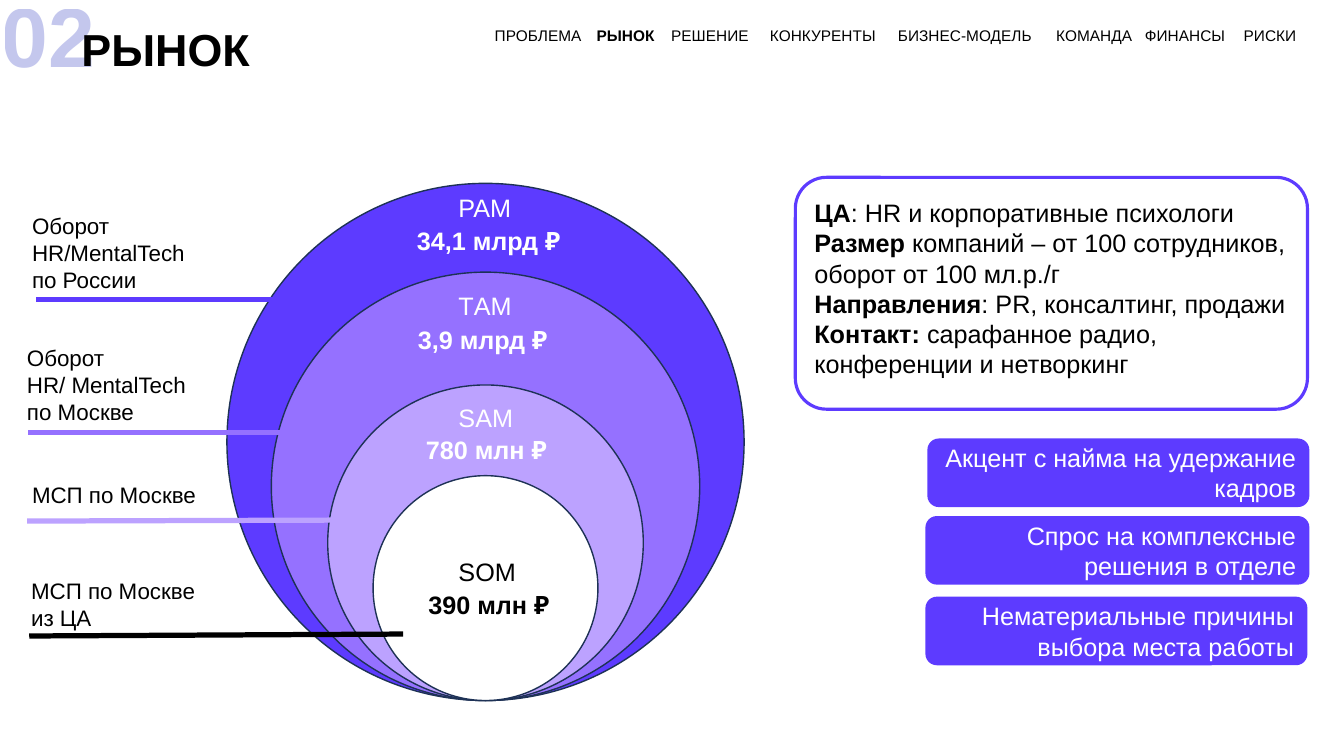
from lxml.etree import SubElement
from pptx import Presentation
from pptx.dml.color import RGBColor
from pptx.enum.shapes import MSO_CONNECTOR, MSO_SHAPE
from pptx.enum.text import MSO_ANCHOR, PP_ALIGN
from pptx.oxml.ns import qn
from pptx.util import Pt

FONT = "Arial"
COLORS = {
    "black": "000000",
    "white": "FFFFFF",
    "violet": "5D3BFF",
    "lilac": "9571FF",
    "lavender": "BCA2FF",
    "outline": "1E3256",
    "number": "565FCE",
}

SECTIONS = [
    ("ПРОБЛЕМА", 346.3, 77),
    ("РЫНОК", 419, 56.2),
    ("РЕШЕНИЕ", 472.3, 70.6),
    ("КОНКУРЕНТЫ", 542.9, 92.2),
    ("БИЗНЕС-МОДЕЛЬ", 634.3, 110.9),
    ("КОМАНДА", 747.4, 69.1),
    ("ФИНАНСЫ", 810.7, 72.7),
    ("РИСКИ", 881.3, 52.6),
]
CURRENT_SECTION = "РЫНОК"

CIRCLE_CENTER, CIRCLE_BOTTOM = 346.8, 500.4
MARKETS = [
    ("PAM", 133.9, "34,1 млрд ₽", 285.3, 157.7, 369.4, "violet", "white"),
    ("ТAM", 203.8, "3,9 млрд ₽", 281, 228.2, 306, "lilac", "white"),
    ("SAM", 283.7, "780 млн ₽", 283.7, 306.7, 225.4, "lavender", "white"),
    ("SOM", 393.8, "390 млн ₽", 285.5, 417.6, 160.6, "white", "black"),
]

CALLOUTS = [
    (["Оборот HR/MentalTech", "по России"], (15.8, 148.3, 176.4, 65.5), True),
    (["Оборот", "HR/ MentalTech", "по Москве"], (12.2, 242.6, 156.2, 65.5), True),
    (["МСП по Москве"], (15.8, 339.8, 133.2, 26.6), False),
    (["МСП по Москве", "из ЦА"], (15.1, 409, 137.5, 46.1), False),
]
POINTERS = [
    ((229.7, 213.8), (25.9, 213.8), "violet"),
    ((223.9, 308.9), (20.2, 308.9), "lilac"),
    ((244.8, 371.5), (19.4, 372.2), "lavender"),
    ((288, 452.9), (20.9, 454.3), "black"),
]

AUDIENCE = [
    ("ЦА", ": HR и корпоративные психологи"),
    ("Размер", " компаний – от 100 сотрудников, оборот от 100 мл.р./г"),
    ("Направления", ": PR, консалтинг, продажи"),
    ("Контакт: ", "сарафанное радио, конференции и нетворкинг"),
]
TRENDS = [
    ("Акцент с найма на удержание кадров", 662.4, 313.2, 272.9),
    ("Спрос на комплексные решения в отделе", 661, 368.6, 274.3),
    ("Нематериальные причины выбора места работы", 661, 426.2, 272.9),
]


def rgb(name):
    return RGBColor.from_string(COLORS[name])


def format_span(span, size, color, bold=False):
    span.font.name = FONT
    span.font.size = Pt(size)
    span.font.bold = bold
    span.font.color.rgb = rgb(color)


def add_text(page, lines, bounds, size, color="black", bold=False, wrap=False,
             align=PP_ALIGN.LEFT):
    box = page.shapes.add_textbox(*map(Pt, bounds))
    box.text_frame.word_wrap = wrap
    box.text_frame.text = "\n".join(lines)
    for para in box.text_frame.paragraphs:
        para.alignment = align
        format_span(para.runs[0], size, color, bold)
    return box


def add_filled_shape(page, kind, bounds, fill, line=None, line_width=1):
    shape = page.shapes.add_shape(kind, *map(Pt, bounds))
    shape.shadow.inherit = False
    shape.fill.solid()
    shape.fill.fore_color.rgb = rgb(fill)
    if line:
        shape.line.color.rgb = rgb(line)
        shape.line.width = Pt(line_width)
    else:
        shape.line.fill.background()
    return shape


def add_pointer(page, start, end, color):
    pointer = page.shapes.add_connector(MSO_CONNECTOR.STRAIGHT, *map(Pt, start + end))
    pointer.line.color.rgb = rgb(color)
    pointer.line.width = Pt(3.75)
    SubElement(pointer._element.spPr, qn("a:effectLst"))


def add_header(page):
    for name, left, width in SECTIONS:
        add_text(page, [name], (left, 15.1, width, 20.9), 11,
                 bold=name == CURRENT_SECTION)
    number = add_text(page, ["02"], (-5.8, -15.1, 82.1, 79.9), 60, "number", True)
    span = number.text_frame.paragraphs[0].runs[0]
    tint = span.font._element.find(qn("a:solidFill"))[0]
    SubElement(tint, qn("a:alpha"), val="35000")
    add_text(page, ["РЫНОК"], (51.1, 12.2, 136.1, 46.1), 32, bold=True)


def add_markets(page):
    for *labels, diameter, fill, color in MARKETS:
        bounds = (CIRCLE_CENTER - diameter / 2, CIRCLE_BOTTOM - diameter,
                  diameter, diameter)
        add_filled_shape(page, MSO_SHAPE.OVAL, bounds, fill, "outline")
    for name, name_top, value, left, top, diameter, fill, color in MARKETS:
        add_text(page, [name], (320.4, name_top, 74, 28.8), 18, color, wrap=True)
        add_text(page, [value], (left, top, 127.4, 28.8), 18, color, True, True,
                 PP_ALIGN.CENTER)


def add_audience(page):
    frame = add_filled_shape(page, MSO_SHAPE.ROUNDED_RECTANGLE,
                             (568.1, 126.7, 365.8, 165.6), "white", "violet", 2.25)
    frame.adjustments[0] = 0.134
    lines = [term + detail for term, detail in AUDIENCE]
    box = add_text(page, lines, (574.6, 137.5, 359.3, 159.8), 18, wrap=True)
    for para, (term, detail) in zip(box.text_frame.paragraphs, AUDIENCE):
        para.runs[0].text = term
        format_span(para.runs[0], 18, "black", True)
        span = para.add_run()
        span.text = detail
        format_span(span, 18, "black")


def add_trend(page, text, left, top, width):
    card = add_filled_shape(page, MSO_SHAPE.ROUNDED_RECTANGLE,
                            (left, top, width, 49), "violet")
    card.text_frame.word_wrap = True
    card.text_frame.vertical_anchor = MSO_ANCHOR.MIDDLE
    card.text_frame.text = text
    para = card.text_frame.paragraphs[0]
    para.alignment = PP_ALIGN.RIGHT
    format_span(para.runs[0], 18, "white")


def main():
    deck = Presentation()
    deck.slide_width, deck.slide_height = Pt(960), Pt(540)
    page = deck.slides.add_slide(deck.slide_layouts[6])
    add_header(page)
    add_markets(page)
    for trend in TRENDS:
        add_trend(page, *trend)
    add_audience(page)
    for lines, bounds, wrap in CALLOUTS:
        add_text(page, lines, bounds, 16, wrap=wrap)
    for pointer in POINTERS:
        add_pointer(page, *pointer)
    deck.save("out.pptx")


if __name__ == "__main__":
    main()
